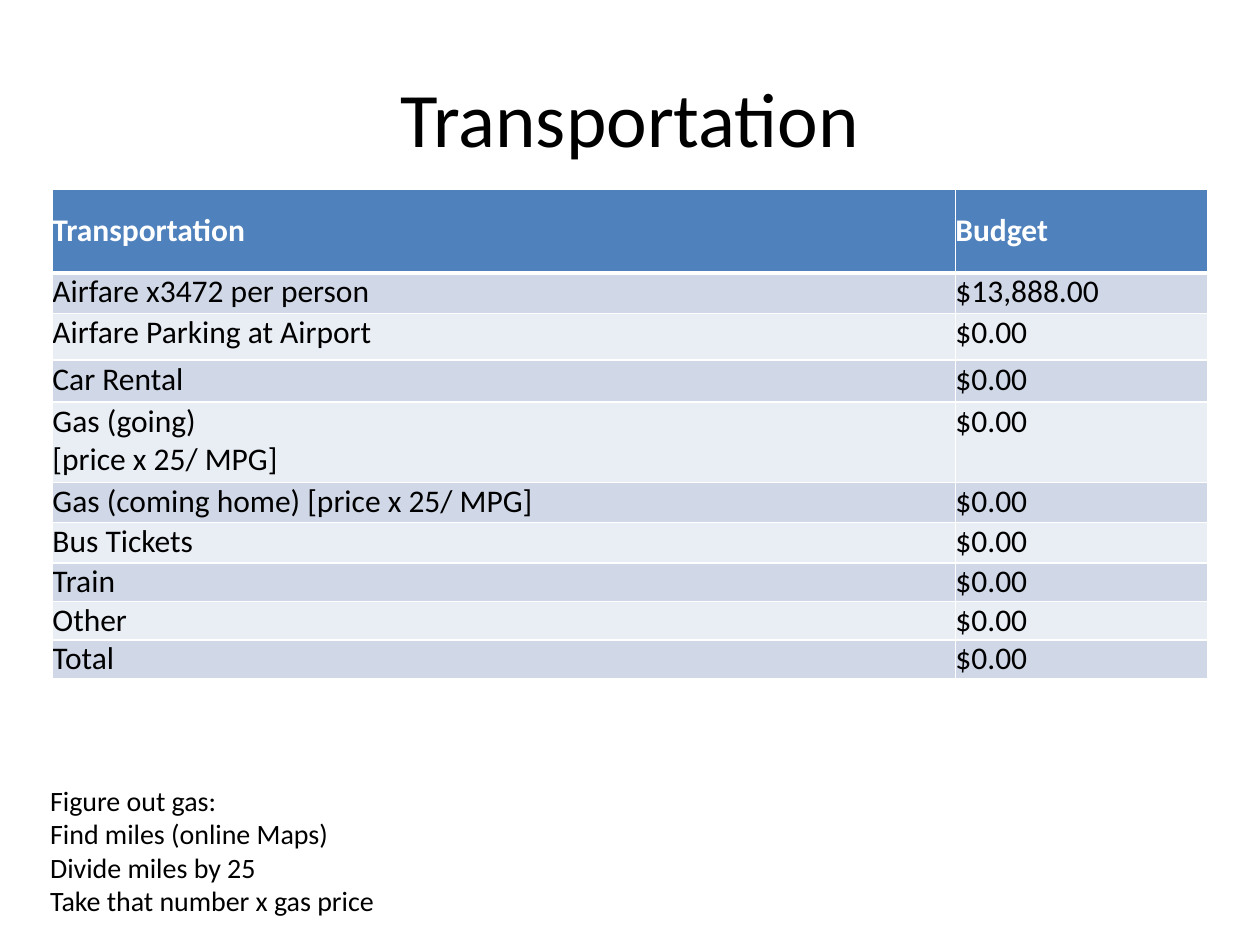
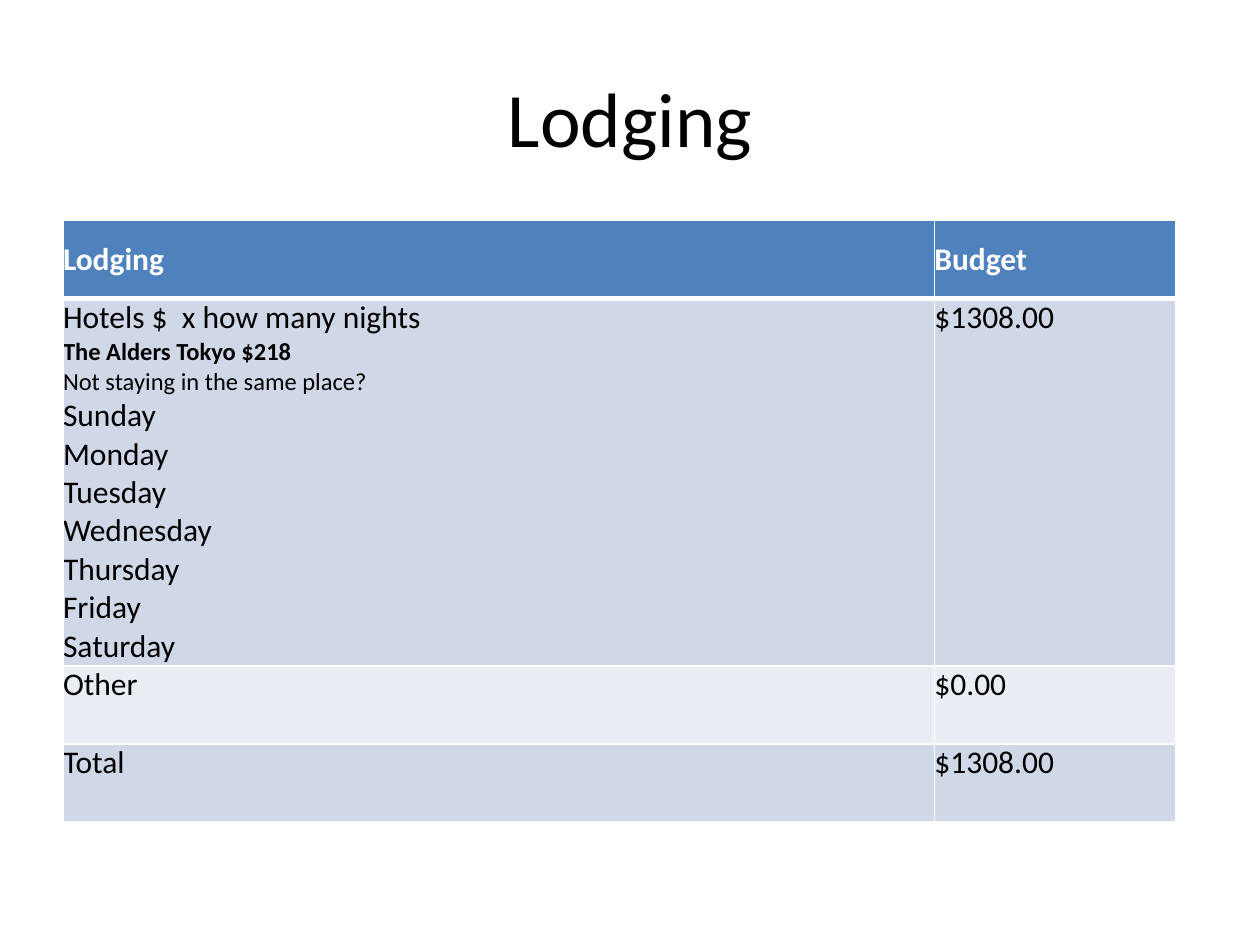
from lxml.etree import SubElement
from pptx import Presentation
from pptx.dml.color import RGBColor
from pptx.enum.text import MSO_ANCHOR as Anchor, MSO_AUTO_SIZE as AutoSize, PP_ALIGN as Align
from pptx.oxml.ns import qn
from pptx.util import Pt

FONT = "Calibri"
BLACK = RGBColor(0x00, 0x00, 0x00)
WHITE = RGBColor(0xFF, 0xFF, 0xFF)
HEADER_BLUE = RGBColor(0x4F, 0x81, 0xBD)
BANDS = (RGBColor(0xD0, 0xD8, 0xE8), RGBColor(0xE9, 0xED, 0xF4))
TITLE_BOX = (36, 21.6, 648, 90)
TITLE_ONLY = 5
BODY_SIZE = 18

TRANSPORT_ROWS = [
    (["Transportation"], "Budget"),
    (["Airfare x3472 per person"], "$13,888.00"),
    (["Airfare Parking at Airport"], "$0.00"),
    (["Car Rental"], "$0.00"),
    (["Gas (going)", "[price x 25/ MPG]"], "$0.00"),
    (["Gas (coming home) [price x 25/ MPG]"], "$0.00"),
    (["Bus Tickets"], "$0.00"),
    (["Train"], "$0.00"),
    (["Other"], "$0.00"),
    (["Total"], "$0.00"),
]
TRANSPORT_HEIGHTS = [48, 23.2, 26.6, 24, 46, 23, 23, 16, 16, 16]

NIGHTS = ["Sunday", "Monday", "Tuesday", "Wednesday", "Thursday", "Friday", "Saturday"]
LODGING_ROWS = [
    (["Lodging"], "Budget"),
    (["Hotels $  x how many nights", ("The Alders Tokyo $218", 14, True),
      ("Not staying in the same place?", 14, False), *NIGHTS], "$1308.00"),
    (["Other"], "$0.00"),
    (["Total"], "$1308.00"),
]
LODGING_HEIGHTS = [44.6] * 4

GAS_STEPS = ["Figure out gas:", "Find miles (online Maps)", "Divide miles by 25",
             "Take that number x gas price"]


def write_lines(frame, lines, size, color=BLACK, bold=False, align=Align.LEFT):
    for index, line in enumerate(lines):
        text, line_size, line_bold = (line, size, bold) if isinstance(line, str) else line
        paragraph = frame.paragraphs[0] if index == 0 else frame.add_paragraph()
        paragraph.alignment = align
        run = paragraph.add_run()
        run.text = text
        run.font.name = FONT
        run.font.size = Pt(line_size)
        run.font.bold = line_bold
        run.font.color.rgb = color


def draw_borders(cell, top, bottom):
    properties = cell._tc.get_or_add_tcPr()
    for side, width in (("L", 1), ("R", 1), ("T", top), ("B", bottom)):
        line = SubElement(properties, qn(f"a:ln{side}"), w=str(Pt(width)))
        fill = SubElement(line, qn("a:solidFill"))
        SubElement(fill, qn("a:srgbClr"), val=str(WHITE))


def fill_cell(cell, lines, row):
    is_header = row == 0
    draw_borders(cell, top=3 if row == 1 else 1, bottom=3 if is_header else 1)
    cell.margin_left = cell.margin_right = cell.margin_top = cell.margin_bottom = 0
    cell.vertical_anchor = Anchor.MIDDLE if is_header else Anchor.TOP
    cell.fill.solid()
    cell.fill.fore_color.rgb = HEADER_BLUE if is_header else BANDS[(row - 1) % 2]
    write_lines(cell.text_frame, lines, BODY_SIZE, WHITE if is_header else BLACK, is_header)


def add_budget_table(slide, left, top, column_widths, heights, entries):
    budget = slide.shapes.add_table(len(entries), 2, Pt(left), Pt(top),
                                    Pt(sum(column_widths)), Pt(sum(heights))).table
    for column, width in zip(budget.columns, column_widths):
        column.width = Pt(width)
    for row, (height, (expense, amount)) in enumerate(zip(heights, entries)):
        budget.rows[row].height = Pt(height)
        fill_cell(budget.cell(row, 0), expense, row)
        fill_cell(budget.cell(row, 1), [amount], row)


def add_titled_slide(deck, heading):
    slide = deck.slides.add_slide(deck.slide_layouts[TITLE_ONLY])
    title = slide.shapes.title
    title.left, title.top, title.width, title.height = map(Pt, TITLE_BOX)
    title.text_frame.vertical_anchor = Anchor.MIDDLE
    write_lines(title.text_frame, [heading], 44, align=Align.CENTER)
    return slide


def add_gas_steps(slide, left, top, width, height):
    frame = slide.shapes.add_textbox(Pt(left), Pt(top), Pt(width), Pt(height)).text_frame
    frame.word_wrap = False
    frame.auto_size = AutoSize.SHAPE_TO_FIT_TEXT
    write_lines(frame, GAS_STEPS, 16)


def main():
    deck = Presentation()
    deck.slide_width, deck.slide_height = Pt(720), Pt(540)

    transportation = add_titled_slide(deck, "Transportation")
    add_budget_table(transportation, 30, 108, (516, 144), TRANSPORT_HEIGHTS, TRANSPORT_ROWS)
    add_gas_steps(transportation, 21.6, 444, 201.6, 85)

    lodging = add_titled_slide(deck, "Lodging")
    add_budget_table(lodging, 36, 126, (498, 138), LODGING_HEIGHTS, LODGING_ROWS)

    deck.save("out.pptx")


if __name__ == "__main__":
    main()
